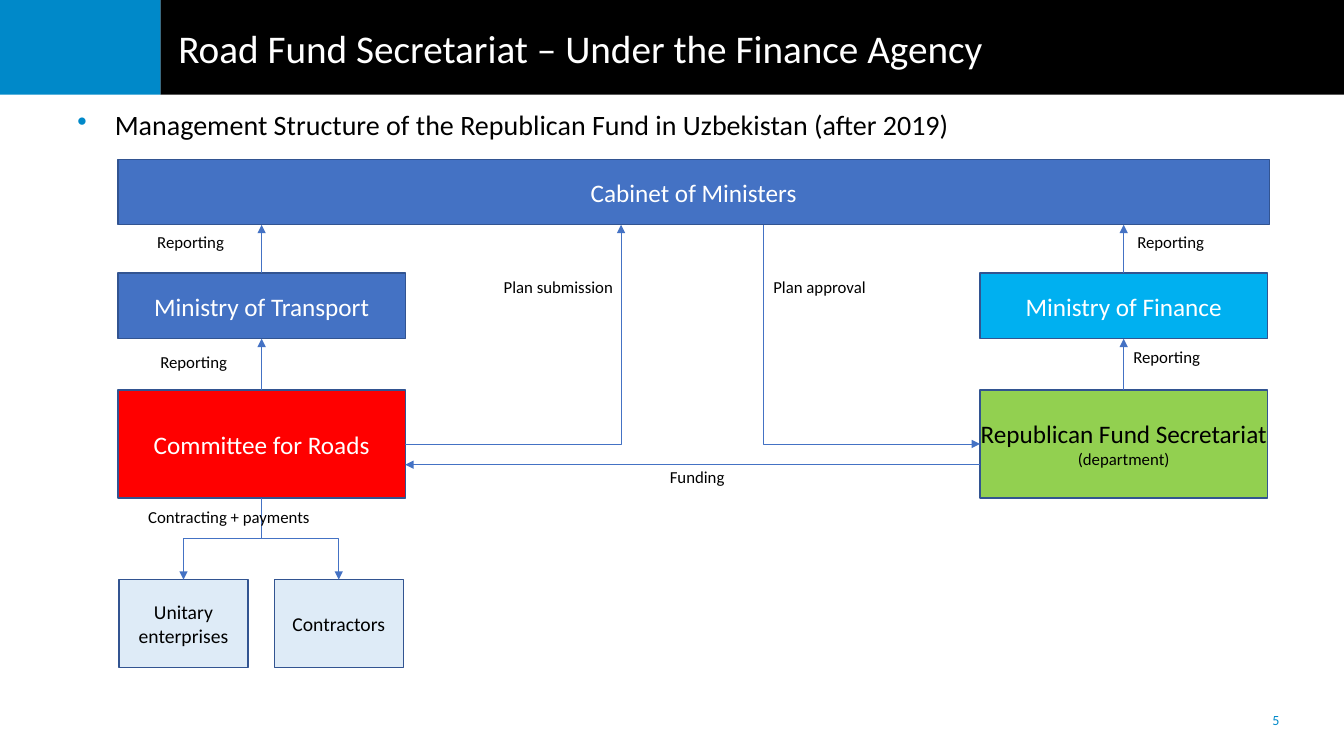
from lxml import etree
from pptx import Presentation
from pptx.dml.color import RGBColor
from pptx.enum.shapes import MSO_CONNECTOR, MSO_SHAPE
from pptx.enum.text import MSO_ANCHOR, PP_ALIGN
from pptx.oxml.ns import qn
from pptx.util import Pt

PX = 9144
RECT = MSO_SHAPE.RECTANGLE
LINE, ELBOW = MSO_CONNECTOR.STRAIGHT, MSO_CONNECTOR.ELBOW
LEFT, MID, RIGHT = PP_ALIGN.LEFT, PP_ALIGN.CENTER, PP_ALIGN.RIGHT
TOP, CENTRE = MSO_ANCHOR.TOP, MSO_ANCHOR.MIDDLE
FONT = "Calibri"
HEX = {
    "black": "000000", "white": "FFFFFF", "brand": "0089C9",
    "blue": "4472C4", "edge": "325491", "sky": "00B0F0",
    "red": "FF0000", "green": "92D050", "pale": "DEEBF7",
}


def tint(name):
    """Return a named colour."""
    return RGBColor.from_string(HEX[name])


def write(shape, text, sizes, color, align, anchor=CENTRE, pad=(0, 0)):
    """Fill a shape with text, one size per paragraph."""
    frame = shape.text_frame
    frame.text = text
    frame.word_wrap = True
    frame.vertical_anchor = anchor
    frame.margin_left = frame.margin_right = pad[0] * PX
    frame.margin_top = frame.margin_bottom = pad[1] * PX
    for para, size in zip(frame.paragraphs, sizes):
        para.alignment = align
        for run in para.runs:
            run.font.name = FONT
            run.font.size = Pt(size)
            run.font.color.rgb = tint(color)
    return frame


def block(slide, box, fill, edge=None):
    """Add a filled rectangle with an optional outline."""
    shape = slide.shapes.add_shape(RECT, *[n * PX for n in box])
    shape.shadow.inherit = False
    shape.fill.solid()
    shape.fill.fore_color.rgb = tint(fill)
    if edge:
        shape.line.color.rgb = tint(edge)
        shape.line.width = Pt(1)
    else:
        shape.line.fill.background()
    return shape


def label(slide, box, text, size, color="black", align=LEFT, anchor=TOP, pad=(0, 0)):
    """Add a text box."""
    shape = slide.shapes.add_textbox(*[n * PX for n in box])
    return write(shape, text, [size], color, align, anchor, pad)


def arrow(slide, kind, start, end, tip="tailEnd"):
    """Add a thin connector with a triangle at one end, points in EMU."""
    link = slide.shapes.add_connector(kind, *[int(n) for n in (*start, *end)])
    link.line.color.rgb = tint("blue")
    link.line.width = Pt(0.5)
    etree.SubElement(link.line._get_or_add_ln(), qn("a:" + tip), type="triangle")
    etree.SubElement(link._element.spPr, qn("a:effectLst"))
    return link


def rise(slide, low, high):
    """Point straight up from the top of one box to the box above."""
    x = low.left + low.width // 2
    foot = high.top + high.height
    link = arrow(slide, LINE, (x, low.top), (x, foot))
    link.begin_connect(low, 0)
    if high.width == low.width:
        link.end_connect(high, 2)


def corner(slide, box, side, x, top, tip):
    """Run from the side of a box to x, then up to the given top."""
    start = box.left + (box.width if side == 3 else 0), box.top + box.height // 2
    link = arrow(slide, ELBOW, start, (x, top), tip)
    link._element.spPr.find(qn("a:prstGeom")).set("prst", "bentConnector2")
    link.begin_connect(box, side)


def branch(slide, high, low):
    """Drop from one box to a box below through a shared crossbar."""
    x, y = high.left + high.width / 2, high.top + high.height
    dx, dy = low.left + low.width / 2 - x, low.top - y
    mx, my = x + dx / 2, y + dy / 2
    start, end = (mx - dy / 2, my + dx / 2), (mx + dy / 2, my - dx / 2)
    link = arrow(slide, ELBOW, start, end)
    link._element.spPr.find(qn("a:xfrm")).set("rot", "5400000")


def header(slide, box):
    """Draw the title band."""
    x, y, w, h = box
    block(slide, (x + 159, y, w - 159, h), "black")
    block(slide, (x, y, 159, h), "brand")
    label(slide, (x + 167, y + 8, w - 167, 79),
          "Road Fund Secretariat – Under the Finance Agency",
          28, "white", anchor=CENTRE, pad=(10, 5))


def lead(slide, box):
    """Write the bulleted line under the title."""
    frame = label(slide, box,
                  "Management Structure of the Republican Fund in Uzbekistan (after 2019)",
                  20, pad=(10, 5))
    para = frame.paragraphs[0]
    para.space_before = Pt(4)
    props = para._p.get_or_add_pPr()
    props.set("marL", str(37 * PX))
    props.set("indent", str(-37 * PX))
    color = etree.SubElement(props, qn("a:buClr"))
    etree.SubElement(color, qn("a:srgbClr"), val=HEX["brand"])
    etree.SubElement(props, qn("a:buChar"), char="•")


def chart(slide, box):
    """Draw the management structure."""
    x, y, w, h = box
    col, far = 285, 855
    parts = {
        "cabinet": ((0, 0, w, 65), "blue", "white", "Cabinet of Ministers", [18]),
        "transport": ((0, 113, col, 65), "blue", "white", "Ministry of Transport", [18]),
        "finance": ((far, 113, col, 65), "sky", "white", "Ministry of Finance", [18]),
        "roads": ((0, 229, col, 107), "red", "white", "Committee for Roads", [18]),
        "fund": ((far, 229, col, 107), "green", "black",
                 "Republican Fund Secretariat\n(department)", [18, 12]),
        "unit": ((1, h - 87, 128, 87), "pale", "black", "Unitary enterprises", [14]),
        "firm": ((155, h - 87, 128, 87), "pale", "black", "Contractors", [14]),
    }
    node = {}
    for name, (spot, fill, ink, text, sizes) in parts.items():
        dx, dy, wide, high = spot
        node[name] = block(slide, (x + dx, y + dy, wide, high), fill, "edge")
        write(node[name], text, sizes, ink, MID)

    for low, high in (("transport", "cabinet"), ("roads", "transport"),
                      ("finance", "cabinet"), ("fund", "finance")):
        rise(slide, node[low], node[high])
    top = (y + 65) * PX
    corner(slide, node["roads"], 3, (x + 499) * PX, top, "tailEnd")
    corner(slide, node["fund"], 1, (x + 640) * PX, top, "headEnd")
    for name in ("unit", "firm"):
        branch(slide, node["roads"], node[name])
    flow = (y + 303) * PX
    arrow(slide, LINE, ((x + far) * PX, flow), ((x + col) * PX, flow))

    for dx, dy, wide, text, align in (
        (39, 72, 173, "Reporting", LEFT),
        (42, 191, 173, "Reporting", LEFT),
        (1011, 72, 173, "Reporting", LEFT),
        (1007, 186, 173, "Reporting", LEFT),
        (377, 117, 114, "Plan submission", RIGHT),
        (650, 117, 114, "Plan approval", LEFT),
        (488, 305, 173, "Funding", MID),
        (30, 345, 230, "Contracting + payments", LEFT),
    ):
        label(slide, (x + dx, y + dy, wide, 38), text, 12, align=align)


def main():
    """Build and save the slide."""
    deck = Presentation()
    deck.slide_width, deck.slide_height = 1333 * PX, 750 * PX
    slide = deck.slides.add_slide(deck.slide_layouts[6])
    header(slide, (0, 0, 1333, 94))
    lead(slide, (67, 102, 1266, 50))
    chart(slide, (117, 158, 1142, 504))
    label(slide, (1229, 695, 73, 39), "5", 10, "brand", MID, CENTRE, (10, 5))
    deck.save("out.pptx")


if __name__ == "__main__":
    main()
